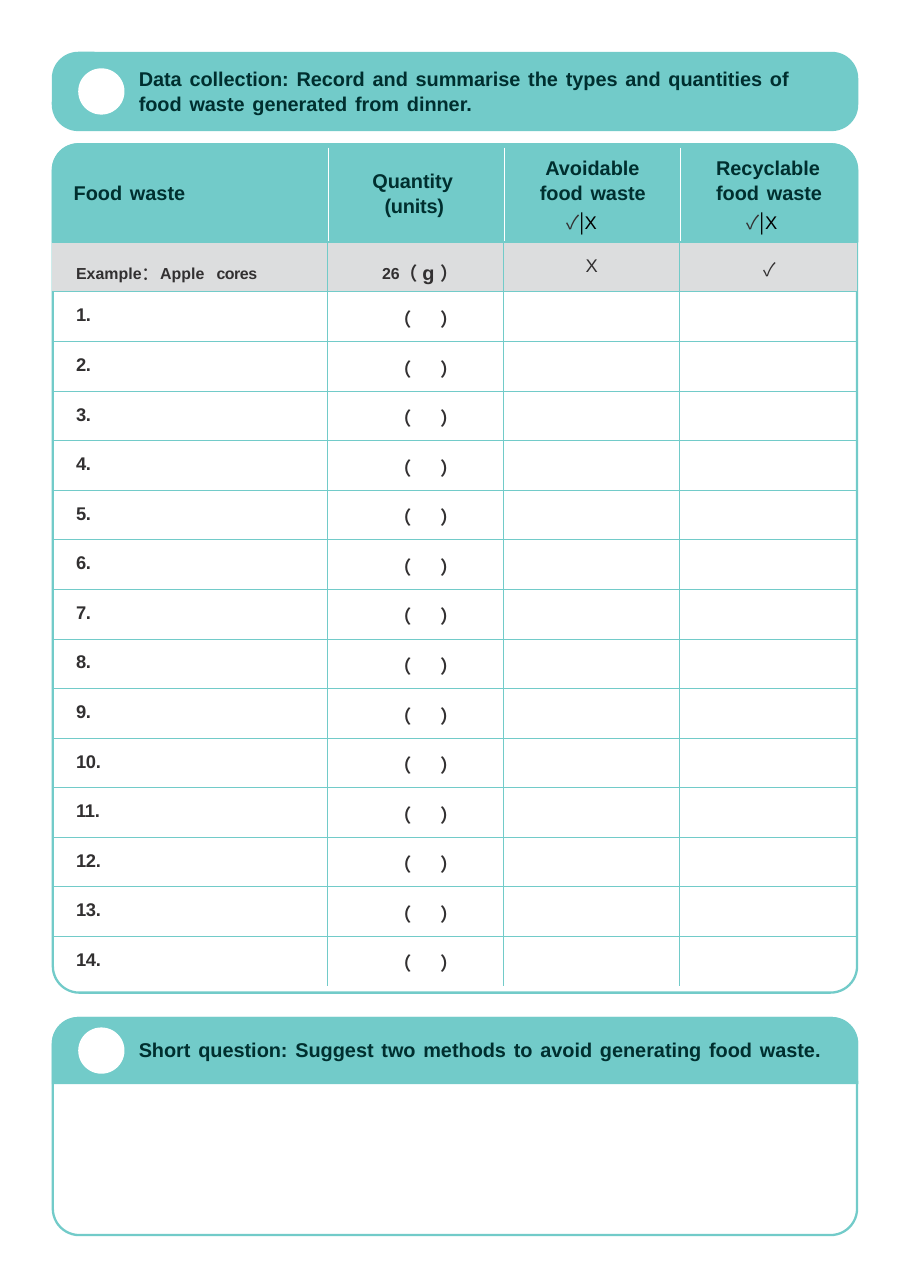
import pptx
import pptx.dml.color
import pptx.enum.shapes
import pptx.enum.text
import pptx.oxml
import pptx.oxml.ns
import pptx.util

Inches, Pt = pptx.util.Inches, pptx.util.Pt
SHAPE = pptx.enum.shapes.MSO_SHAPE
ALIGN = pptx.enum.text.PP_ALIGN
TEAL, WHITE, GREY = "72CBC9", "FFFFFF", "DCDDDE"
DARK, INK, BLACK = "002F2F", "323031", "000000"
LEFT, WIDTH, ROUND = 0.47, 7.32, 0.24
COLS = [2.5, 1.6, 1.6, 1.61]
ROW, COUNT = 0.45, 14


def color(code):
    return pptx.dml.color.RGBColor.from_string(code)


def node(parent, tag, **attrs):
    item = pptx.oxml.parse_xml(f"<a:{tag} {pptx.oxml.ns.nsdecls('a')}/>")
    for key, value in attrs.items():
        item.set(key, str(value))
    parent.append(item)
    return item


def style(font, size, code=INK, bold=False, name="Arial"):
    font.size, font.bold, font.name = Pt(size), bold, name
    font.color.rgb = color(code)


def add_run(para, text, gap=0, base=0):
    """Add a run with letter spacing in points and a baseline shift in percent."""
    run = para.add_run()
    run.text = text
    props = run.font._element
    if gap:
        props.set("spc", str(round(gap * 100)))
    if base:
        props.set("baseline", str(base * 1000))
    return run


def spread(para, text, gap, base=0):
    """Write words with widened spaces between them."""
    for i, word in enumerate(text.split(" ")):
        if i:
            add_run(para, " ", gap, base)
        add_run(para, word, 0, base)


def indent(para, left, first=0):
    props = para._p.get_or_add_pPr()
    props.set("marL", str(Inches(left)))
    props.set("indent", str(Inches(first)))


def add_panel(slide, kind, box, fill=None, line=None):
    left, top, width, height = box
    panel = slide.shapes.add_shape(kind, *map(Inches, box))
    panel.shadow.inherit = False
    if kind != SHAPE.OVAL:
        panel.adjustments[0] = ROUND / min(width, height)
    if fill:
        panel.fill.solid()
        panel.fill.fore_color.rgb = color(fill)
    else:
        panel.fill.background()
    if line:
        panel.line.color.rgb = color(line)
        panel.line.width = Pt(1.5)
    else:
        panel.line.fill.background()


def add_label(slide, box, text, first=0, lead=None):
    frame = slide.shapes.add_textbox(*map(Inches, box)).text_frame
    frame.word_wrap = True
    frame.margin_left = frame.margin_right = frame.margin_bottom = 0
    frame.margin_top = Inches(0.01)
    para = frame.paragraphs[0]
    para.space_before = Pt(1)
    para.line_spacing = lead
    indent(para, 0.01, first)
    style(para.font, 13, DARK, True)
    spread(para, text, 1.5)


def add_banner(slide, kind, top, height, text, box, lead=None):
    """Draw a teal bar with a white dot and a heading."""
    add_panel(slide, kind, (LEFT, top, WIDTH, height), TEAL)
    dot = 0.42
    add_panel(slide, SHAPE.OVAL,
              (LEFT + 0.24, top + (height - dot) / 2, dot, dot), WHITE)
    add_label(slide, (LEFT + 0.78, top + box[0], box[1], box[2]), text, lead=lead)


def add_marks(slide, left, top):
    """Write the tick-or-cross key of a column."""
    frame = slide.shapes.add_textbox(*map(Inches, (left, top, 0.59, 0.32))).text_frame
    frame.word_wrap = False
    para = frame.paragraphs[0]
    tick = "Noto Sans CJK TC"
    for text, size, code, name, gap in (("✓", 12.5, INK, tick, -0.5),
                                        ("|", 13, BLACK, tick, 0),
                                        ("X", 12, BLACK, "Arial", 0)):
        style(add_run(para, text, gap).font, size, code, name=name)


def add_header(slide, top):
    add_panel(slide, SHAPE.ROUND_2_SAME_RECTANGLE, (LEFT, top, WIDTH, 0.9), TEAL)
    add_panel(slide, SHAPE.ROUNDED_RECTANGLE,
              (LEFT + 0.01, top + 0.01, WIDTH - 0.02, 7.7), line=TEAL)
    for i in (1, 2, 3):
        x = Inches(LEFT + 0.01 + sum(COLS[:i]))
        rule = slide.shapes.add_connector(
            pptx.enum.shapes.MSO_CONNECTOR.STRAIGHT,
            x, Inches(top + 0.04), x, Inches(top + 0.92))
        rule.line.color.rgb = color(WHITE)
        rule.line.width = Pt(0.75)
        node(rule._element.spPr, "effectLst")
    add_label(slide, (0.66, top + 0.33, 1.1, 0.23), "Food waste")
    add_label(slide, (3.37, top + 0.22, 0.81, 0.23), "Quantity")
    add_label(slide, (4.89, top + 0.09, 0.98, 0.48), "Avoidable food waste", 0.05, 1.06)
    add_label(slide, (6.49, top + 0.09, 0.98, 0.48), "Recyclable food waste", lead=1.06)


def set_borders(cell, row, col):
    props = cell._tc.get_or_add_tcPr()
    shown = {"lnL": col > 0, "lnR": col < len(COLS) - 1,
             "lnT": row > 0, "lnB": row < COUNT + 1}
    for i, (tag, on) in enumerate(shown.items()):
        thick = (row, tag) in ((0, "lnB"), (1, "lnT"))
        line = node(props, tag, w=Pt(1.5 if thick else 0.75))
        props.remove(line)
        props.insert(i, line)
        if on:
            node(node(line, "solidFill"), "srgbClr", val=TEAL)
        else:
            node(line, "noFill")


def fill_example(grid):
    food, amount, avoid, cycle = (grid.cell(1, i).text_frame.paragraphs[0] for i in range(4))
    indent(food, 0.22)
    amount.alignment = ALIGN.RIGHT
    for para, parts in ((food, (("Example", 18, True, "Arial", 0, 2),
                                ("：", 12, False, "Noto Sans", 0, 0),
                                ("Apple", 18, True, "Arial", 0, 2),
                                (" ", 18, True, "Arial", 5, 2),
                                ("cores", 18, True, "Arial", -0.3, 2))),
                        (amount, (("26", 18, True, "Arial", 0, 2),
                                  ("（ ", 12, True, "Noto Sans", 0, 0),
                                  ("g ", 13, True, "Arial", 0, 0),
                                  ("）", 12, True, "Noto Sans", -0.5, 0)))):
        for text, size, bold, name, gap, base in parts:
            style(add_run(para, text, gap, base).font, size, INK, bold, name)
    for para, mark, name in ((avoid, "X", "Arial"), (cycle, "✓", "Noto Sans CJK TC")):
        para.alignment = ALIGN.CENTER
        style(para.font, 12, name=name)
        add_run(para, mark)
    indent(cycle, 0.03)


def fill_row(grid, row):
    """Write the number and the empty unit brackets of a blank row."""
    number, unit = (grid.cell(row, i).text_frame.paragraphs[0] for i in (0, 1))
    indent(number, 0.22)
    style(number.font, 12, bold=True)
    add_run(number, f"{row - 1}.", -0.2)
    unit.alignment = ALIGN.RIGHT
    tabs = node(unit._p.get_or_add_pPr(), "tabLst")
    node(tabs, "tab", pos=Inches(0.42), algn="l")
    style(unit.font, 12, bold=True, name="Noto Sans")
    add_run(unit, "（\t）", -0.5)


def add_grid(slide, top):
    rows = COUNT + 2
    frame = slide.shapes.add_table(rows, len(COLS), *map(
        Inches, (LEFT, top, WIDTH, 0.31 + ROW * (rows - 1))))
    grid = frame.table
    grid.first_row = grid.horz_banding = False
    for col, width in zip(grid.columns, COLS):
        col.width = Inches(width)
    for r in range(rows):
        grid.rows[r].height = Inches(ROW if r else 0.31)
        for c in range(len(COLS)):
            cell = grid.cell(r, c)
            cell.margin_left = cell.margin_right = cell.margin_bottom = 0
            cell.margin_top = Inches(0.12 if r else 0)
            if r and c == 1:
                cell.margin_right = Inches(0.41)
            if r == 1:
                cell.fill.solid()
                cell.fill.fore_color.rgb = color(GREY)
            else:
                cell.fill.background()
            set_borders(cell, r, c)
        if r > 1:
            fill_row(grid, r)
    units = grid.cell(0, 1).text_frame.paragraphs[0]
    indent(units, 0.52)
    units.line_spacing = Pt(6.2)
    style(units.font, 13, DARK, True)
    add_run(units, "(units)", -0.1)
    fill_example(grid)


def add_question(slide, top):
    add_panel(slide, SHAPE.ROUNDED_RECTANGLE,
              (LEFT + 0.01, top + 0.01, WIDTH - 0.02, 1.97), line=TEAL)
    add_banner(slide, SHAPE.ROUND_2_SAME_RECTANGLE, top, 0.61,
               "Short question: Suggest two methods to avoid generating food waste.",
               (0.18, 6.3, 0.23))


def main():
    deck = pptx.Presentation()
    deck.slide_width, deck.slide_height = Inches(8.26), Inches(11.69)
    slide = deck.slides.add_slide(deck.slide_layouts[6])
    add_banner(slide, SHAPE.ROUNDED_RECTANGLE, 0.47, 0.72,
               "Data collection: Record and summarise the types and quantities of "
               "food waste generated from dinner.", (0.12, 6.23, 0.47), 1.03)
    add_header(slide, 1.3)
    add_grid(slide, 1.89)
    add_question(slide, 9.23)
    for left in (5.04, 6.68):
        add_marks(slide, left, 1.85)
    deck.save("out.pptx")


if __name__ == "__main__":
    main()
